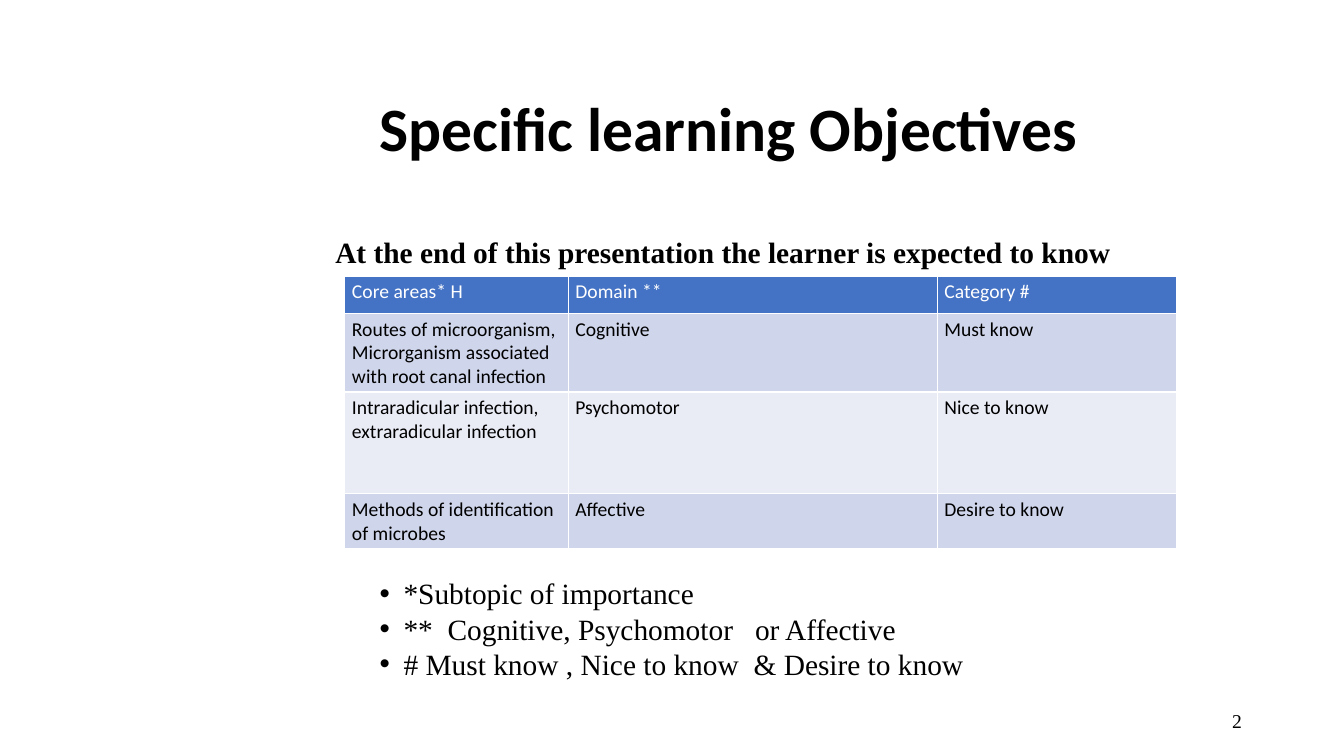
from lxml.etree import SubElement
from pptx import Presentation
from pptx.dml.color import RGBColor
from pptx.enum.text import MSO_ANCHOR as Anchor, PP_ALIGN as Align
from pptx.oxml.ns import qn
from pptx.util import Cm, Pt

BLACK = RGBColor(0x00, 0x00, 0x00)
WHITE = RGBColor(0xFF, 0xFF, 0xFF)
HEADER_BLUE = RGBColor(0x44, 0x72, 0xC4)
BAND_DARK = RGBColor(0xCF, 0xD5, 0xEA)
BAND_LIGHT = RGBColor(0xE9, 0xEB, 0xF5)
SANS = "Calibri"
SERIF = "Times New Roman"

OBJECTIVES = [
    ("Core areas* H", "Domain **", "Category #"),
    ("Routes of microorganism, Microrganism associated with root canal infection",
     "Cognitive", "Must know"),
    ("Intraradicular infection, extraradicular infection", "Psychomotor", "Nice to know"),
    ("Methods of identification of microbes", "Affective", "Desire to know"),
]
COLUMN_WIDTHS = (5.63, 9.3, 6.04)
ROW_HEIGHTS = (0.94, 1.96, 2.56, 0.94)
FOOTNOTES = [
    "*Subtopic of importance",
    "**  Cognitive, Psychomotor   or Affective",
    "# Must know , Nice to know  & Desire to know",
]


def set_font(para, name, size, color=BLACK, bold=False):
    """Give a paragraph its font."""
    font = para.font
    font.name, font.size, font.bold = name, Pt(size), bold
    font.color.rgb = color


def add_bullet(para):
    """Give a paragraph a hanging round bullet."""
    props = para._p.get_or_add_pPr()
    props.set("marL", str(Cm(0.6)))
    props.set("indent", str(-Cm(0.6)))
    SubElement(props, qn("a:buFont"), typeface="Arial")
    SubElement(props, qn("a:buChar"), char="•")


def add_text(page, left, top, width, height, lines, name, size, bold=False,
             anchor=Anchor.TOP, align=Align.LEFT, spacing=1.0, bullets=False):
    """Add a text box with one paragraph per line."""
    box = page.shapes.add_textbox(Cm(left), Cm(top), Cm(width), Cm(height))
    frame = box.text_frame
    frame.word_wrap = True
    frame.vertical_anchor = anchor
    frame.text = "\n".join(lines)
    for para in frame.paragraphs:
        para.alignment = align
        para.line_spacing = spacing
        if bullets:
            add_bullet(para)
        set_font(para, name, size, bold=bold)


def add_objectives_table(page, left, top):
    """Add the banded table of learning objectives."""
    table = page.shapes.add_table(
        len(OBJECTIVES), len(COLUMN_WIDTHS), Cm(left), Cm(top),
        Cm(sum(COLUMN_WIDTHS)), Cm(sum(ROW_HEIGHTS))).table
    for column, width in zip(table.columns, COLUMN_WIDTHS):
        column.width = Cm(width)
    for index, (row, height, texts) in enumerate(zip(table.rows, ROW_HEIGHTS, OBJECTIVES)):
        row.height = Cm(height)
        band = BAND_DARK if index % 2 else BAND_LIGHT
        for cell, text in zip(row.cells, texts):
            cell.text = text
            cell.margin_left = cell.margin_right = Cm(0.18)
            cell.margin_top = cell.margin_bottom = Cm(0.1)
            cell.fill.solid()
            cell.fill.fore_color.rgb = band if index else HEADER_BLUE
            set_font(cell.text_frame.paragraphs[0], SANS, 14, BLACK if index else WHITE)


def main():
    """Build the learning objectives slide."""
    deck = Presentation()
    deck.slide_width, deck.slide_height = Cm(33.87), Cm(19.05)
    page = deck.slides.add_slide(deck.slide_layouts[6])
    add_text(page, 9.32, 2.16, 19.3, 2.29, ["Specific learning Objectives"], SANS, 44,
             bold=True, anchor=Anchor.MIDDLE, spacing=0.9)
    add_objectives_table(page, 8.69, 6.96)
    add_text(page, 9.32, 14.38, 17.27, 2.95, FOOTNOTES, SERIF, 21, bullets=True)
    add_text(page, 8.2, 5.77, 20.42, 1.14,
             ["At the end of this presentation the learner is expected to know"],
             SERIF, 21, bold=True)
    add_text(page, 23.93, 17.65, 7.62, 1.02, ["2"], SERIF, 14,
             anchor=Anchor.MIDDLE, align=Align.RIGHT)
    deck.save("out.pptx")


if __name__ == "__main__":
    main()
